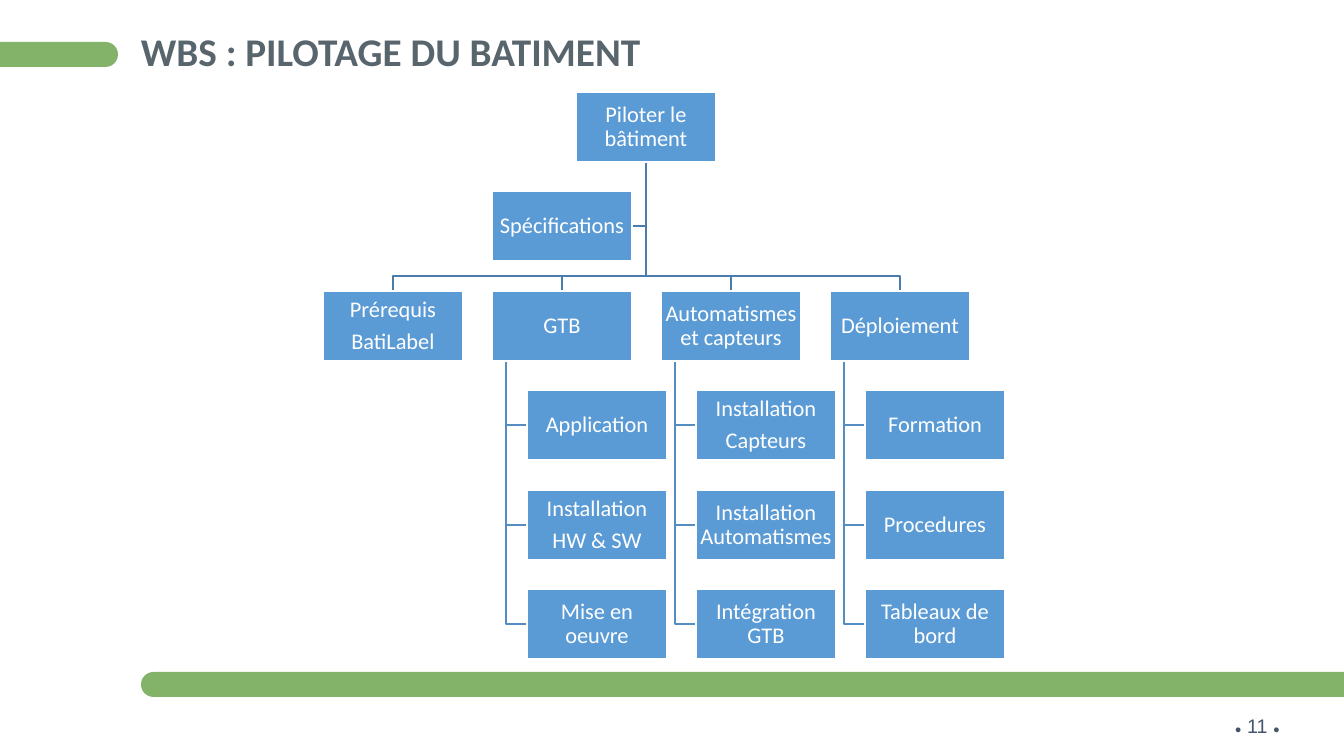
from dataclasses import dataclass
from typing import Any

import pptx
import pptx.dml.color
import pptx.enum.shapes
import pptx.enum.text
import pptx.oxml
import pptx.oxml.ns
import pptx.util

RGBColor = pptx.dml.color.RGBColor
GREEN = RGBColor(0x63, 0xA1, 0x43)
BLUE = RGBColor(0x5B, 0x9B, 0xD5)
TRUNK_BLUE = RGBColor(0x49, 0x7C, 0xAB)
RAIL_BLUE = RGBColor(0x53, 0x8D, 0xC1)
WHITE = RGBColor(0xFF, 0xFF, 0xFF)
TITLE_GREY = RGBColor(0x59, 0x65, 0x6D)
NUMBER_BLUE = RGBColor(0x44, 0x54, 0x6A)

SLIDE_WIDTH, SLIDE_HEIGHT = 1344, 756
BOX_WIDTH, BOX_HEIGHT = 140, 70
FIRST_LEFT, COLUMN_STEP = 323, 169
FIRST_TOP, TWO_ROW_STEP = 92, 199
CHILD_INDENT, RAIL_INDENT, BUS_GAP = 35, 14, 15
ROOT_LEFT = FIRST_LEFT + 3 * COLUMN_STEP // 2
TRUNK_X = ROOT_LEFT + BOX_WIDTH // 2


@dataclass(frozen=True)
class Bar:
    left: int
    top: int
    width: int
    height: int


@dataclass(frozen=True)
class Branch:
    label: str
    tasks: tuple[str, ...] = ()


BARS = (Bar(141, 672, 1223, 25), Bar(-13, 42, 131, 25))
BRANCHES = (
    Branch("Prérequis\nBatiLabel"),
    Branch("GTB", ("Application", "Installation\nHW & SW", "Mise en oeuvre")),
    Branch(
        "Automatismes et capteurs",
        ("Installation\nCapteurs", "Installation Automatismes", "Intégration GTB"),
    ),
    Branch("Déploiement", ("Formation", "Procedures", "Tableaux de bord")),
)


def px(length: int) -> pptx.util.Emu:
    return pptx.util.Emu(round(length * pptx.util.Inches(1) / 100.8))


def apply(target: Any, values: dict[str, Any]) -> None:
    for name, value in values.items():
        setattr(target, name, value)


def format_frame(frame: Any, margin: int) -> None:
    apply(frame, {
        "word_wrap": True,
        "vertical_anchor": pptx.enum.text.MSO_ANCHOR.MIDDLE,
        "margin_left": px(margin),
        "margin_right": px(margin),
        "margin_top": px(margin),
        "margin_bottom": px(margin),
    })


def format_font(font: Any, name: str, points: int, color: RGBColor, bold: bool = False) -> None:
    apply(font, {"name": name, "size": pptx.util.Pt(points), "bold": bold})
    font.color.rgb = color


def row_top(row: int) -> int:
    return FIRST_TOP + TWO_ROW_STEP * row // 2


def row_middle(row: int) -> int:
    return row_top(row) + BOX_HEIGHT // 2


def add_title(page: Any) -> None:
    title = page.shapes.title
    apply(title, {"left": px(141), "top": px(33), "width": px(1121), "height": px(42)})
    frame = title.text_frame
    frame.text = "WBS : PILOTAGE DU BATIMENT"
    format_frame(frame, 0)
    frame.auto_size = pptx.enum.text.MSO_AUTO_SIZE.SHAPE_TO_FIT_TEXT
    para = frame.paragraphs[0]
    apply(para, {"alignment": pptx.enum.text.PP_ALIGN.LEFT, "line_spacing": 0.9})
    format_font(para.runs[0].font, "Calibri", 28, TITLE_GREY, True)


def add_page_number(page: Any) -> None:
    box = page.shapes.add_textbox(px(1225), px(709), px(118), px(34))
    box.text_frame.word_wrap = True
    para = box.text_frame.paragraphs[0]
    for text, points in (("●", 8), (" 11 ", 14), ("●", 8)):
        span = para.add_run()
        span.text = text
        format_font(span.font, "Arial", points, NUMBER_BLUE)


def add_bar(page: Any, bar: Bar) -> None:
    shape = page.shapes.add_shape(
        pptx.enum.shapes.MSO_SHAPE.ROUNDED_RECTANGLE,
        px(bar.left), px(bar.top), px(bar.width), px(bar.height),
    )
    shape.adjustments[0] = 0.5
    shape.shadow.inherit = False
    shape.fill.solid()
    shape.fill.fore_color.rgb = GREEN
    shape.line.fill.background()
    color = shape.fill._xPr.find(".//" + pptx.oxml.ns.qn("a:srgbClr"))
    color.append(pptx.oxml.parse_xml(
        f'<a:alpha {pptx.oxml.ns.nsdecls("a")} val="80000"/>'
    ))


def add_link(page: Any, color: RGBColor, *points: tuple[int, int]) -> None:
    start, *others = [(px(x), px(y)) for x, y in points]
    builder = page.shapes.build_freeform(*start)
    builder.add_line_segments(others, close=False)
    link = builder.convert_to_shape()
    link.shadow.inherit = False
    link.fill.background()
    link.line.color.rgb = color
    link.line.width = pptx.util.Pt(1)


def add_box(page: Any, label: str, left: int, row: int) -> None:
    box = page.shapes.add_shape(
        pptx.enum.shapes.MSO_SHAPE.RECTANGLE,
        px(left), px(row_top(row)), px(BOX_WIDTH), px(BOX_HEIGHT),
    )
    box.shadow.inherit = False
    box.fill.solid()
    box.fill.fore_color.rgb = BLUE
    box.line.color.rgb = WHITE
    box.line.width = pptx.util.Pt(1)
    frame = box.text_frame
    frame.text = label
    format_frame(frame, 1)
    for para in frame.paragraphs:
        apply(para, {
            "alignment": pptx.enum.text.PP_ALIGN.CENTER,
            "line_spacing": 0.9,
            "space_after": pptx.util.Pt(5.6),
        })
        format_font(para.runs[0].font, "Calibri", 16, WHITE)


def add_branch(page: Any, branch: Branch, left: int) -> None:
    middle, top = left + BOX_WIDTH // 2, row_top(2)
    rail = left + RAIL_INDENT
    add_link(page, TRUNK_BLUE, (TRUNK_X, row_top(0) + BOX_HEIGHT),
             (TRUNK_X, top - BUS_GAP), (middle, top - BUS_GAP), (middle, top))
    for row, task in enumerate(branch.tasks, start=3):
        add_link(page, RAIL_BLUE, (rail, top + BOX_HEIGHT),
                 (rail, row_middle(row)), (left + CHILD_INDENT, row_middle(row)))
        add_box(page, task, left + CHILD_INDENT, row)
    add_box(page, branch.label, left, 2)


def main() -> None:
    deck = pptx.Presentation()
    apply(deck, {"slide_width": px(SLIDE_WIDTH), "slide_height": px(SLIDE_HEIGHT)})
    page = deck.slides.add_slide(deck.slide_layouts[5])
    add_page_number(page)
    for bar in BARS:
        add_bar(page, bar)
    add_title(page)
    specification_left = FIRST_LEFT + COLUMN_STEP
    add_link(page, TRUNK_BLUE, (TRUNK_X, row_top(0) + BOX_HEIGHT),
             (TRUNK_X, row_middle(1)), (specification_left + BOX_WIDTH, row_middle(1)))
    for column, branch in enumerate(BRANCHES):
        add_branch(page, branch, FIRST_LEFT + column * COLUMN_STEP)
    add_box(page, "Piloter le bâtiment", ROOT_LEFT, 0)
    add_box(page, "Spécifications", specification_left, 1)
    deck.save("out.pptx")


if __name__ == "__main__":
    main()
